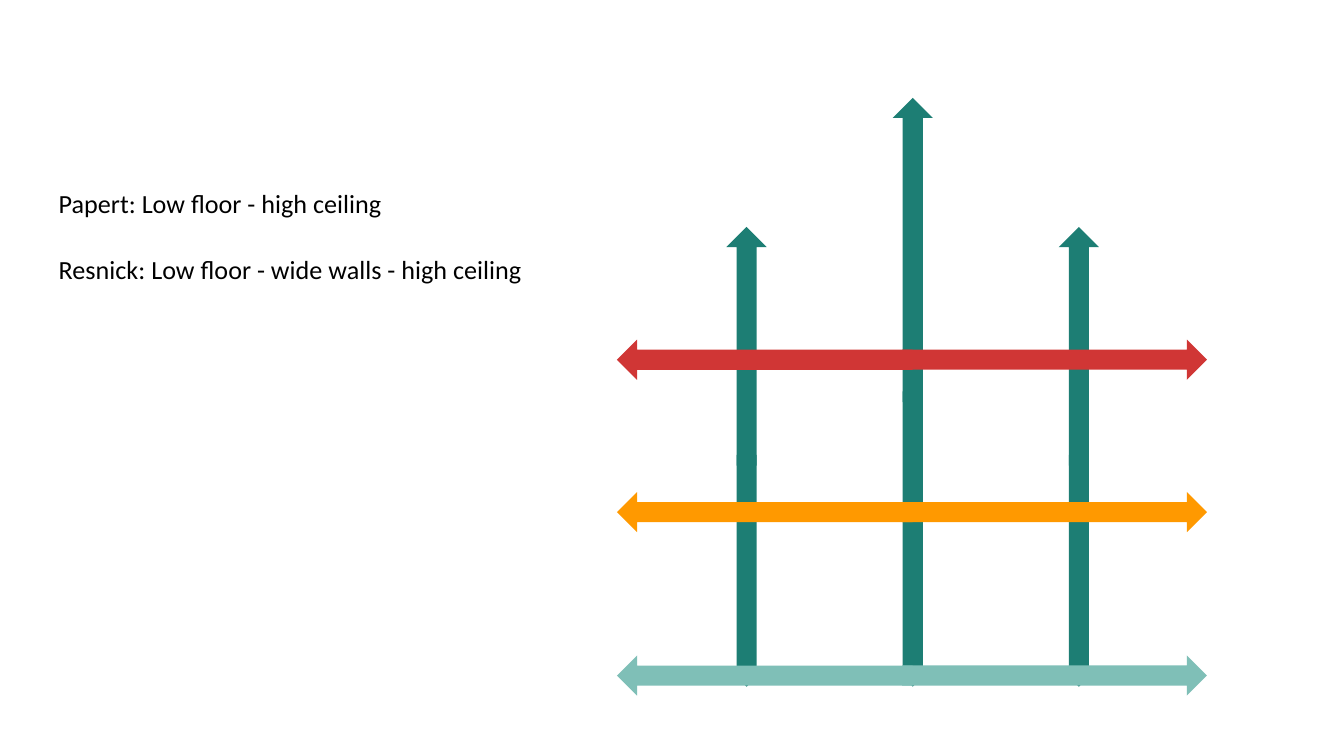
from dataclasses import dataclass

from lxml import etree
from pptx import Presentation
from pptx.dml.color import RGBColor
from pptx.enum.shapes import MSO_SHAPE
from pptx.enum.text import MSO_ANCHOR, MSO_AUTO_SIZE, PP_ALIGN
from pptx.oxml.ns import qn
from pptx.util import Cm, Pt

UP_ARROW = MSO_SHAPE.UP_ARROW
TOP = MSO_ANCHOR.TOP
NO_AUTOFIT = MSO_AUTO_SIZE.NONE
LEFT = PP_ALIGN.LEFT


@dataclass(frozen=True)
class Theme:
    font: str = "Calibri"
    body_size: int = 14
    text: str = "000000"
    vertical: str = "1D7E74"
    floor: str = "7FBFB7"
    middle: str = "FF9900"
    upper: str = "D03635"


def set_attributes(target, values):
    for name, value in values.items():
        setattr(target, name, value)


class SlideBuilder:
    arrow_width = 0.76
    overlap = 0.2

    def __init__(self, slide, theme):
        self.slide = slide
        self.theme = theme

    def body(self, left, top, width, height, lines):
        placeholder = self.slide.placeholders[1]
        set_attributes(placeholder, {
            "left": Cm(left), "top": Cm(top),
            "width": Cm(width), "height": Cm(height),
        })
        inset = Cm(0.25)
        frame = placeholder.text_frame
        set_attributes(frame, {
            "margin_left": inset, "margin_right": inset,
            "margin_top": inset, "margin_bottom": inset,
            "word_wrap": True, "vertical_anchor": TOP, "auto_size": NO_AUTOFIT,
        })
        frame.text = "\n".join(lines)
        for index, paragraph in enumerate(frame.paragraphs):
            set_attributes(paragraph, {
                "alignment": LEFT, "line_spacing": 1.15,
                "space_before": Pt(16 if index else 0),
            })
            properties = paragraph._p.get_or_add_pPr()
            properties.set("marL", "0")
            properties.set("indent", "0")
            etree.SubElement(properties, qn("a:buNone"))
            font = paragraph.runs[0].font
            set_attributes(font, {"name": self.theme.font, "size": Pt(self.theme.body_size)})
            font.color.rgb = RGBColor.from_string(self.theme.text)

    def arrow(self, center_x, center_y, length, rotation, colour):
        shape = self.slide.shapes.add_shape(
            UP_ARROW, Cm(center_x - self.arrow_width / 2), Cm(center_y - length / 2),
            Cm(self.arrow_width), Cm(length))
        shape.rotation = rotation
        shape.shadow.inherit = False
        shape.fill.solid()
        shape.fill.fore_color.rgb = RGBColor.from_string(colour)
        shape.line.fill.background()

    def vertical_arrow(self, center_x, top, middle, bottom):
        """Two opposed arrows that overlap just below the given middle."""
        first_end = middle + self.overlap
        colour = self.theme.vertical
        self.arrow(center_x, (top + first_end) / 2, first_end - top, 0, colour)
        self.arrow(center_x, (middle + bottom) / 2, bottom - middle, 180, colour)

    def horizontal_arrow(self, center_y, left, middle, right, colour):
        """Two opposed arrows that overlap just left of the given middle."""
        start = middle - self.overlap
        self.arrow((start + right) / 2, center_y, right - start, 90, colour)
        self.arrow((left + middle) / 2, center_y, middle - left, 270, colour)


def main():
    presentation = Presentation()
    presentation.slide_width = Cm(25.4)
    presentation.slide_height = Cm(14.29)
    slide = presentation.slides.add_slide(presentation.slide_layouts[1])
    title = slide.shapes.title.element
    title.getparent().remove(title)

    theme = Theme()
    builder = SlideBuilder(slide, theme)
    builder.body(0.86, 3.2, 23.67, 9.5, [
        "Papert: Low floor - high ceiling",
        "Resnick: Low floor - wide walls - high ceiling",
    ])

    center_x, side_gap = 17.25, 3.14
    bottom = 12.98
    builder.vertical_arrow(center_x, 1.85, 7.4, bottom)
    for side_x in (center_x - side_gap, center_x + side_gap):
        builder.vertical_arrow(side_x, 4.29, 8.6, bottom)

    for center_y, colour in ((12.77, theme.floor), (9.68, theme.middle), (6.8, theme.upper)):
        builder.horizontal_arrow(center_y, 11.66, center_x, 22.81, colour)

    presentation.save("out.pptx")


if __name__ == "__main__":
    main()
